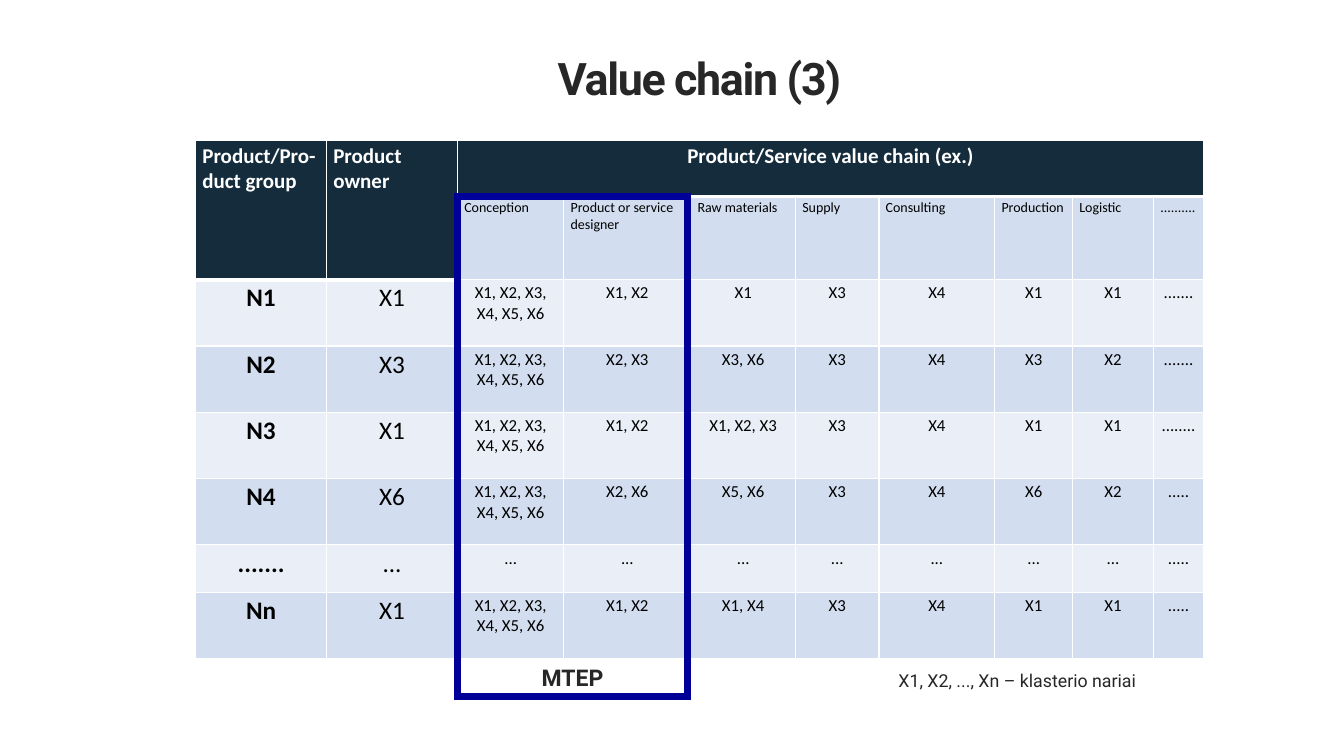
from lxml.etree import SubElement
from pptx import Presentation
from pptx.dml.color import RGBColor
from pptx.enum.shapes import MSO_SHAPE
from pptx.enum.text import MSO_ANCHOR, PP_ALIGN
from pptx.oxml import parse_xml
from pptx.oxml.ns import nsdecls, qn
from pptx.util import Cm, Pt

HEADER, DARK_BAND, LIGHT_BAND = "142C3C", "D2DEEF", "EAEFF7"
WHITE, BLACK, INK, FRAME = "FFFFFF", "000000", "272727", "000099"


def color(hex_value):
    return RGBColor.from_string(hex_value)


def write(frame, text, font, size, hex_value, bold=False, align=PP_ALIGN.CENTER):
    frame.word_wrap = True
    paragraph = frame.paragraphs[0]
    paragraph.alignment = align
    run = paragraph.add_run()
    run.text = text
    run.font.name = font
    run.font.size = Pt(size)
    run.font.bold = bold
    run.font.color.rgb = color(hex_value)
    return run


prs = Presentation()
prs.slide_width, prs.slide_height = Cm(33.87), Cm(19.05)
slide = prs.slides.add_slide(prs.slide_layouts[5])

# Title
title = slide.shapes.title
title.left, title.top, title.width, title.height = Cm(6.32), Cm(1.32), Cm(22.61), Cm(1.42)
heading = title.text_frame
heading.margin_left = heading.margin_right = heading.margin_top = heading.margin_bottom = 0
heading.vertical_anchor = MSO_ANCHOR.MIDDLE
title_run = write(heading, "Value chain (3)", "Roboto", 32, INK, bold=True)
title_run.font._element.set("spc", "-100")
heading.paragraphs[0].line_spacing = 0.9

# Value chain table
members = "X1, X2, X3, X4, X5, X6"
rows = [
    ["Product/Pro-duct group", "Product owner", "Product/Service value chain (ex.)"] + [""] * 7,
    ["", "", "Conception", "Product or service designer", "Raw materials", "Supply",
     "Consulting", "Production", "Logistic", ".........."],
    ["N1", "X1", members, "X1, X2", "X1", "X3", "X4", "X1", "X1", "......."],
    ["N2", "X3", members, "X2, X3", "X3, X6", "X3", "X4", "X3", "X2", "......."],
    ["N3", "X1", members, "X1, X2", "X1, X2, X3", "X3", "X4", "X1", "X1", "........"],
    ["N4", "X6", members, "X2, X6", "X5, X6", "X3", "X4", "X6", "X2", "....."],
    ["......."] + ["..."] * 8 + ["....."],
    ["Nn", "X1", members, "X1, X2", "X1, X4", "X3", "X4", "X1", "X1", "....."],
]
column_widths = [3.3, 3.3, 2.68, 3.2, 2.64, 2.1, 2.92, 1.96, 2.04, 1.26]
row_heights = [1.42, 2.1, 1.67, 1.67, 1.67, 1.67, 1.19, 1.67]
chain = slide.shapes.add_table(len(rows), len(column_widths), Cm(4.93), Cm(3.53),
                               Cm(sum(column_widths)), Cm(sum(row_heights))).table
for column, width in zip(chain.columns, column_widths):
    column.width = Cm(width)
for row, height in zip(chain.rows, row_heights):
    row.height = Cm(height)
for c in (0, 1):
    chain.cell(0, c).merge(chain.cell(1, c))
chain.cell(0, 2).merge(chain.cell(0, 9))

for r, labels in enumerate(rows):
    for c, label in enumerate(labels):
        cell = chain.cell(r, c)
        cell.margin_left = cell.margin_right = Cm(0.17)
        cell.margin_top = cell.margin_bottom = Cm(0.08)
        in_header = r == 0 or (r == 1 and c < 2)
        cell.fill.solid()
        cell.fill.fore_color.rgb = color(
            HEADER if in_header else DARK_BAND if r % 2 else LIGHT_BAND)

        if label:
            if r == 0:
                size, ink, bold = 15, WHITE, True
            elif r == 1:
                size, ink, bold = 10, BLACK, False
            else:
                size, ink, bold = 18 if c < 2 else 12, BLACK, c == 0
            left_aligned = r == 1 or (r == 0 and c < 2)
            write(cell.text_frame, label, "Calibri", size, ink, bold,
                  PP_ALIGN.LEFT if left_aligned else PP_ALIGN.CENTER)

        # The header is closed by a thicker rule, one row lower in the merged columns
        last_header_row = 1 if c < 2 else 0
        weights = {"lnL": 1, "lnR": 1,
                   "lnT": 3 if r == last_header_row + 1 else 1,
                   "lnB": 3 if r == last_header_row else 1}
        properties = cell._tc.get_or_add_tcPr()
        for position, (side, weight) in enumerate(weights.items()):
            border = parse_xml(f'<a:{side} {nsdecls("a")} w="{Pt(weight)}"/>')
            fill = SubElement(border, qn("a:solidFill"))
            SubElement(fill, qn("a:srgbClr"), val=WHITE)
            properties.insert(position, border)

# Legend
legend = slide.shapes.add_textbox(Cm(21.74), Cm(16.74), Cm(7.8), Cm(0.79))
write(legend.text_frame, "X1, X2, ..., Xn – klasterio nariai", "Roboto", 12.7, INK)

# MTEP frame
mtep = slide.shapes.add_shape(MSO_SHAPE.RECTANGLE, Cm(11.53), Cm(4.95), Cm(5.8), Cm(12.6))
mtep.shadow.inherit = False
mtep.fill.background()
mtep.line.color.rgb = color(FRAME)
mtep.line.width = Pt(4.5)
SubElement(mtep.line._get_or_add_ln(), qn("a:miter"), lim="800000")
mtep.text_frame.vertical_anchor = MSO_ANCHOR.BOTTOM
write(mtep.text_frame, "MTEP", "Roboto", 16.4, INK, bold=True)

prs.save("out.pptx")
